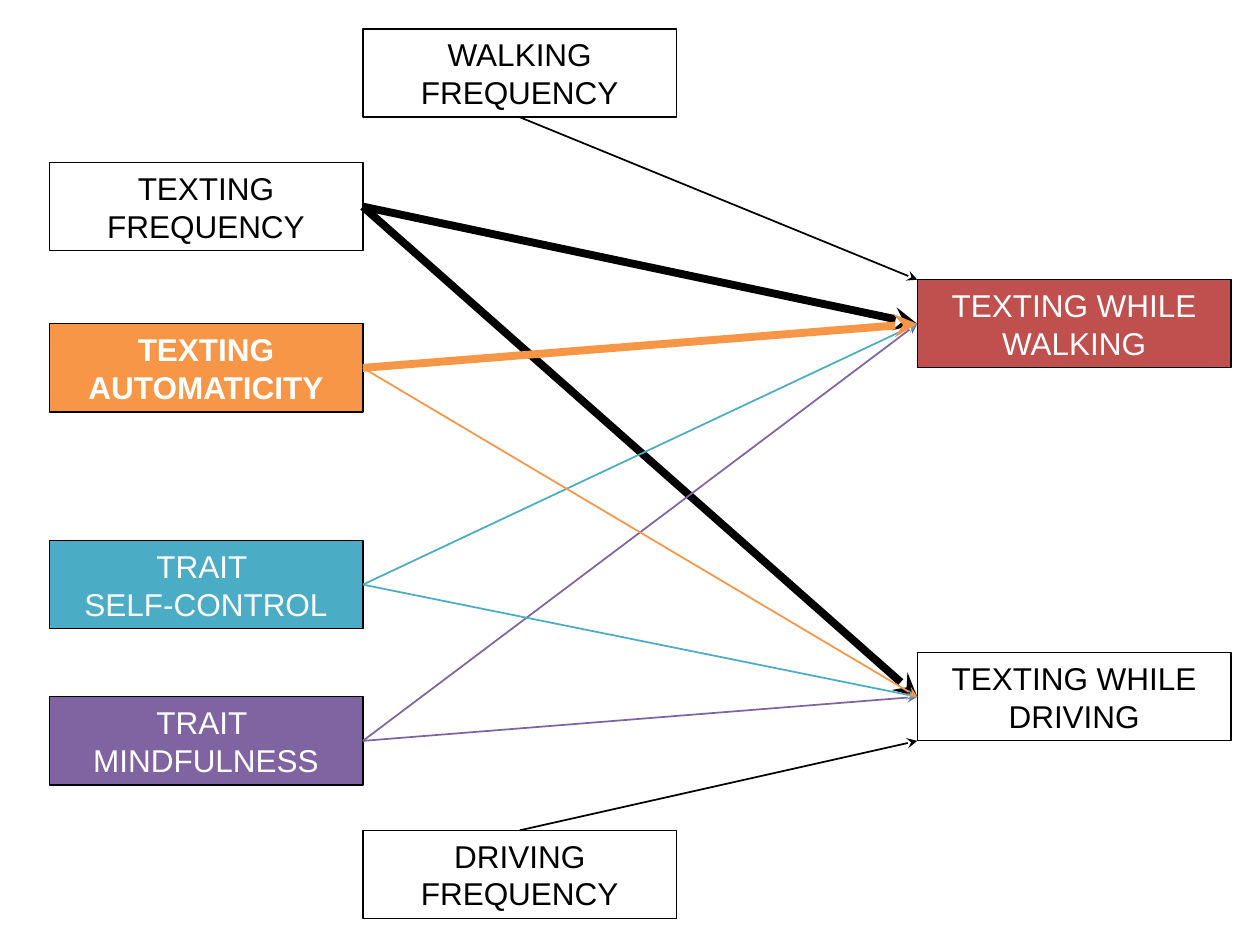
"""Build a path diagram of what predicts texting while walking and driving."""
from dataclasses import dataclass

from lxml.etree import SubElement
from pptx import Presentation
from pptx.dml.color import RGBColor
from pptx.enum.shapes import MSO_CONNECTOR as Connector, MSO_SHAPE as Shape
from pptx.enum.text import MSO_ANCHOR as Anchor, PP_ALIGN as Align
from pptx.oxml.ns import qn
from pptx.slide import Slide
from pptx.util import Inches, Pt

BLACK = RGBColor(0x00, 0x00, 0x00)
WHITE = RGBColor(0xFF, 0xFF, 0xFF)
RED = RGBColor(0xC0, 0x50, 0x4D)
ORANGE = RGBColor(0xF7, 0x96, 0x46)
TEAL = RGBColor(0x4B, 0xAC, 0xC6)
PURPLE = RGBColor(0x80, 0x64, 0xA2)

COLUMNS, ROWS = 100, 75
BOX_WIDTH, BOX_HEIGHT = 24.9, 7
PREDICTOR_COLUMN, OUTCOME_COLUMN = 3.9, 72.8
CONTROL_COLUMN = PREDICTOR_COLUMN + BOX_WIDTH
TOP, LEFT, BOTTOM, RIGHT = range(4)
THIN, THICK = 1, 4.5


@dataclass
class Diagram:
    slide: Slide
    width: int
    height: int
    font_name: str = "Arial"
    font_size: float = 18
    outline: float = 0.75

    def x(self, columns):
        return round(self.width * columns / COLUMNS)

    def y(self, rows):
        return round(self.height * rows / ROWS)

    def box(self, column, row, lines, fill=WHITE, bold=False):
        shape = self.slide.shapes.add_shape(
            Shape.RECTANGLE, self.x(column), self.y(row), self.x(BOX_WIDTH), self.y(BOX_HEIGHT))
        shape.shadow.inherit = False
        shape.fill.solid()
        shape.fill.fore_color.rgb = fill
        shape.line.color.rgb = BLACK
        shape.line.width = Pt(self.outline)
        frame = shape.text_frame
        frame.word_wrap = True
        frame.vertical_anchor = Anchor.MIDDLE
        frame.text = "\n".join(lines)
        for paragraph in frame.paragraphs:
            paragraph.alignment = Align.CENTER
            font = paragraph.font
            font.name, font.size, font.bold = self.font_name, Pt(self.font_size), bold
            font.color.rgb = BLACK if fill == WHITE else WHITE
        return shape

    def arrow(self, start, start_side, end, color=BLACK, weight=THIN, corner=None):
        end_y = end.top + end.height if corner == BOTTOM else end.top
        connector = self.slide.shapes.add_connector(
            Connector.STRAIGHT, start.left, start.top, end.left, end_y)
        connector.begin_connect(start, start_side)
        if corner is None:
            connector.end_connect(end, LEFT)
        connector.line.color.rgb = color
        connector.line.width = Pt(weight)
        SubElement(connector.line._get_or_add_ln(), qn("a:tailEnd"), type="stealth")
        SubElement(connector._element.spPr, qn("a:effectLst"))


def main():
    presentation = Presentation()
    presentation.slide_width, presentation.slide_height = Inches(10), Inches(7.5)
    slide = presentation.slides.add_slide(presentation.slide_layouts[6])
    diagram = Diagram(slide, presentation.slide_width, presentation.slide_height)

    walking = diagram.box(OUTCOME_COLUMN, 22.2, ["TEXTING WHILE WALKING"], RED)
    driving = diagram.box(OUTCOME_COLUMN, 51.8, ["TEXTING WHILE DRIVING"])
    frequency = diagram.box(PREDICTOR_COLUMN, 12.9, ["TEXTING", "FREQUENCY"])
    automaticity = diagram.box(PREDICTOR_COLUMN, 25.7, ["TEXTING", "AUTOMATICITY"], ORANGE, bold=True)
    self_control = diagram.box(PREDICTOR_COLUMN, 42.9, ["TRAIT ", "SELF-CONTROL"], TEAL)
    mindfulness = diagram.box(PREDICTOR_COLUMN, 55.3, ["TRAIT ", "MINDFULNESS"], PURPLE)
    walking_frequency = diagram.box(CONTROL_COLUMN, 2.3, ["WALKING", "FREQUENCY"])
    driving_frequency = diagram.box(CONTROL_COLUMN, 65.9, ["DRIVING", "FREQUENCY"])

    for predictor, color, walking_weight, driving_weight in (
        (frequency, BLACK, THICK, THICK),
        (mindfulness, PURPLE, THIN, THIN),
        (self_control, TEAL, THIN, THIN),
        (automaticity, ORANGE, THICK, THIN),
    ):
        diagram.arrow(predictor, RIGHT, walking, color, walking_weight)
        diagram.arrow(predictor, RIGHT, driving, color, driving_weight)
    diagram.arrow(driving_frequency, TOP, driving, corner=BOTTOM)
    diagram.arrow(walking_frequency, BOTTOM, walking, corner=TOP)

    presentation.save("out.pptx")


if __name__ == "__main__":
    main()
